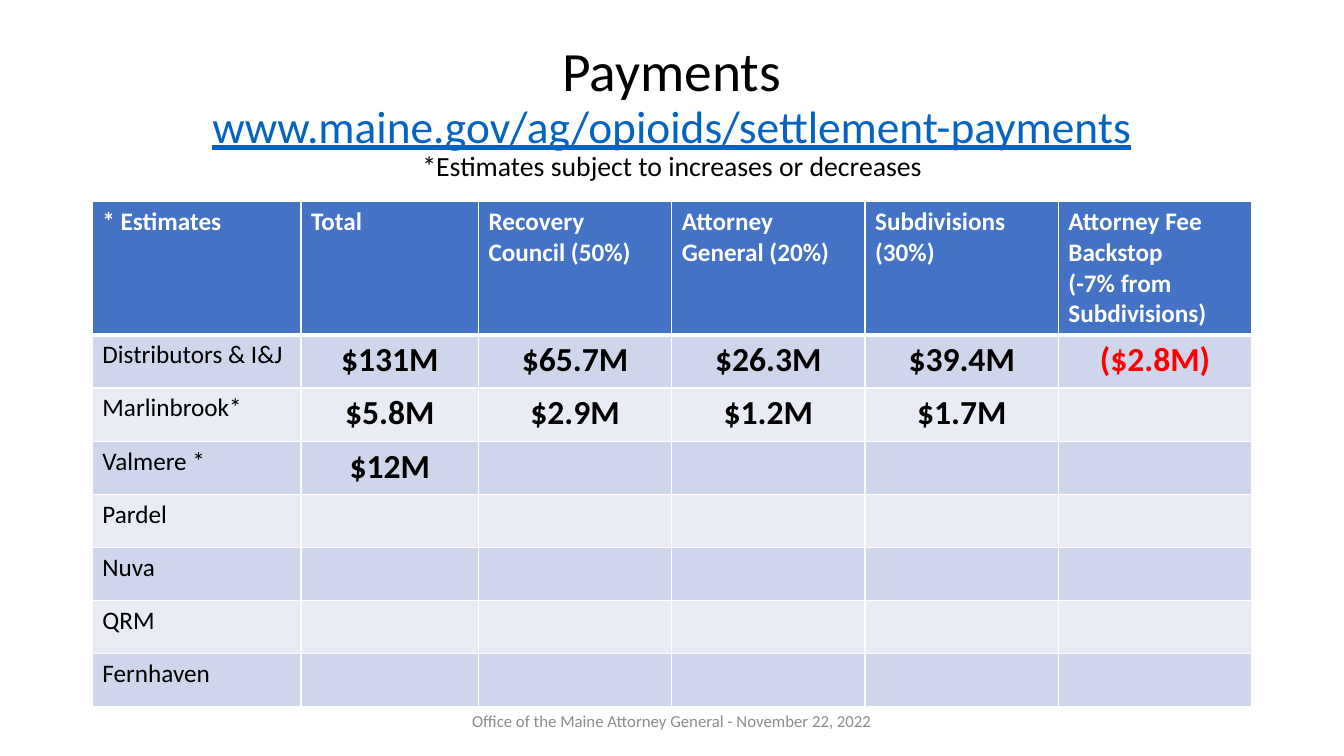
"""Build the settlement payments slide."""
from lxml import etree
from pptx import Presentation
from pptx.dml.color import RGBColor
from pptx.enum.text import MSO_ANCHOR, PP_ALIGN
from pptx.oxml.ns import qn
from pptx.util import Pt

CENTER, LEFT = PP_ALIGN.CENTER, PP_ALIGN.LEFT
MIDDLE = MSO_ANCHOR.MIDDLE

WHITE = RGBColor(0xFF, 0xFF, 0xFF)
BLACK = RGBColor(0, 0, 0)
RED = RGBColor(0xFF, 0, 0)
GRAY = RGBColor(0x8C, 0x8C, 0x8C)
LINK_BLUE = RGBColor(0x05, 0x63, 0xC1)
HEADER_BLUE = RGBColor(0x44, 0x72, 0xC4)
BANDS = (RGBColor(0xE9, 0xEB, 0xF5), RGBColor(0xCF, 0xD5, 0xEA))

FONT = "Calibri"
COL_WIDTHS = [149, 126.8] + [138.1] * 4
HEADER_HEIGHT, ROW_HEIGHT = 95, 38
HEADERS = ["* Estimates", "Total", "Recovery Council (50%)",
           "Attorney General (20%)", "Subdivisions (30%)",
           "Attorney Fee Backstop\n(-7% from Subdivisions)"]
PAYMENTS = [
    ["Distributors & I&J", "$131M", "$65.7M", "$26.3M", "$39.4M", "($2.8M)"],
    ["Marlinbrook*", "$5.8M", "$2.9M", "$1.2M", "$1.7M"],
    ["Valmere *", "$12M"],
    ["Pardel"],
    ["Nuva"],
    ["QRM"],
    ["Fernhaven"],
]
TITLE_LINES = [
    ("Payments", dict(size=39.6)),
    ("www.maine.gov/ag/opioids/settlement-payments",
     dict(size=32.4, color=LINK_BLUE, underline=True)),
    ("*Estimates subject to increases or decreases", dict(size=19.8)),
]


def add_text(p, text, size=18, color=BLACK, bold=False, underline=False):
    """Add a formatted run to a paragraph."""
    r = p.add_run()
    r.text = text
    r.font.name = FONT
    r.font.size = Pt(size)
    r.font.color.rgb = color
    r.font.bold = bold
    r.font.underline = underline


def add_box(s, left, top, width, height):
    """Add a middle-anchored text box and return its centred paragraph."""
    sp = s.shapes.add_textbox(Pt(left), Pt(top), Pt(width), Pt(height))
    tf = sp.text_frame
    tf.word_wrap = True
    tf.vertical_anchor = MIDDLE
    p = tf.paragraphs[0]
    p.alignment = CENTER
    return p


def set_borders(cell, **widths):
    """Draw white cell borders, 1 pt wide unless a side says otherwise."""
    tc_pr = cell._tc.get_or_add_tcPr()
    for i, side in enumerate("LRTB"):
        ln = etree.Element(qn(f"a:ln{side}"), w=str(Pt(widths.get(side, 1))))
        fill = etree.SubElement(ln, qn("a:solidFill"))
        etree.SubElement(fill, qn("a:srgbClr"), val=str(WHITE))
        tc_pr.insert(i, ln)


def fill_cell(cell, text, fill, align=LEFT, **fmt):
    """Set the fill of a cell and write its text, one paragraph a line."""
    cell.fill.solid()
    cell.fill.fore_color.rgb = fill
    if not text:
        return
    tf = cell.text_frame
    for i, line in enumerate(text.split("\n")):
        p = tf.add_paragraph() if i else tf.paragraphs[0]
        p.alignment = align
        add_text(p, line, **fmt)


def add_payments_table(s):
    """Add the table of payments with its header and banded rows."""
    rows, cols = len(PAYMENTS) + 1, len(HEADERS)
    height = HEADER_HEIGHT + ROW_HEIGHT * len(PAYMENTS)
    table = s.shapes.add_table(rows, cols, Pt(66), Pt(144),
                               Pt(sum(COL_WIDTHS)), Pt(height)).table
    for column, width in zip(table.columns, COL_WIDTHS):
        column.width = Pt(width)
    for i, row in enumerate(table.rows):
        row.height = Pt(ROW_HEIGHT if i else HEADER_HEIGHT)
    for c, text in enumerate(HEADERS):
        cell = table.cell(0, c)
        fill_cell(cell, text, HEADER_BLUE, color=WHITE, bold=True)
        set_borders(cell, B=3)
    for r, values in enumerate(PAYMENTS, 1):
        for c in range(cols):
            cell = table.cell(r, c)
            text = values[c] if c < len(values) else ""
            fmt = dict(align=CENTER, size=24, bold=True) if c else {}
            color = RED if text.startswith("(") else BLACK
            fill_cell(cell, text, BANDS[r % 2], color=color, **fmt)
            set_borders(cell, T=3 if r == 1 else 1)


def add_title(s):
    """Add the three-line title."""
    p = add_box(s, 66, 28.8, 828, 104.4)
    p.line_spacing = 0.9
    for i, (text, fmt) in enumerate(TITLE_LINES):
        if i:
            p.add_line_break()
        add_text(p, text, **fmt)


def main():
    """Build and save the slide."""
    prs = Presentation()
    prs.slide_width, prs.slide_height = Pt(960), Pt(540)
    s = prs.slides.add_slide(prs.slide_layouts[6])
    add_payments_table(s)
    footer = add_box(s, 318, 500.5, 324, 28.75)
    add_text(footer, "Office of the Maine Attorney General - November 22, 2022",
             size=12, color=GRAY)
    add_title(s)
    prs.save("out.pptx")


if __name__ == "__main__":
    main()
